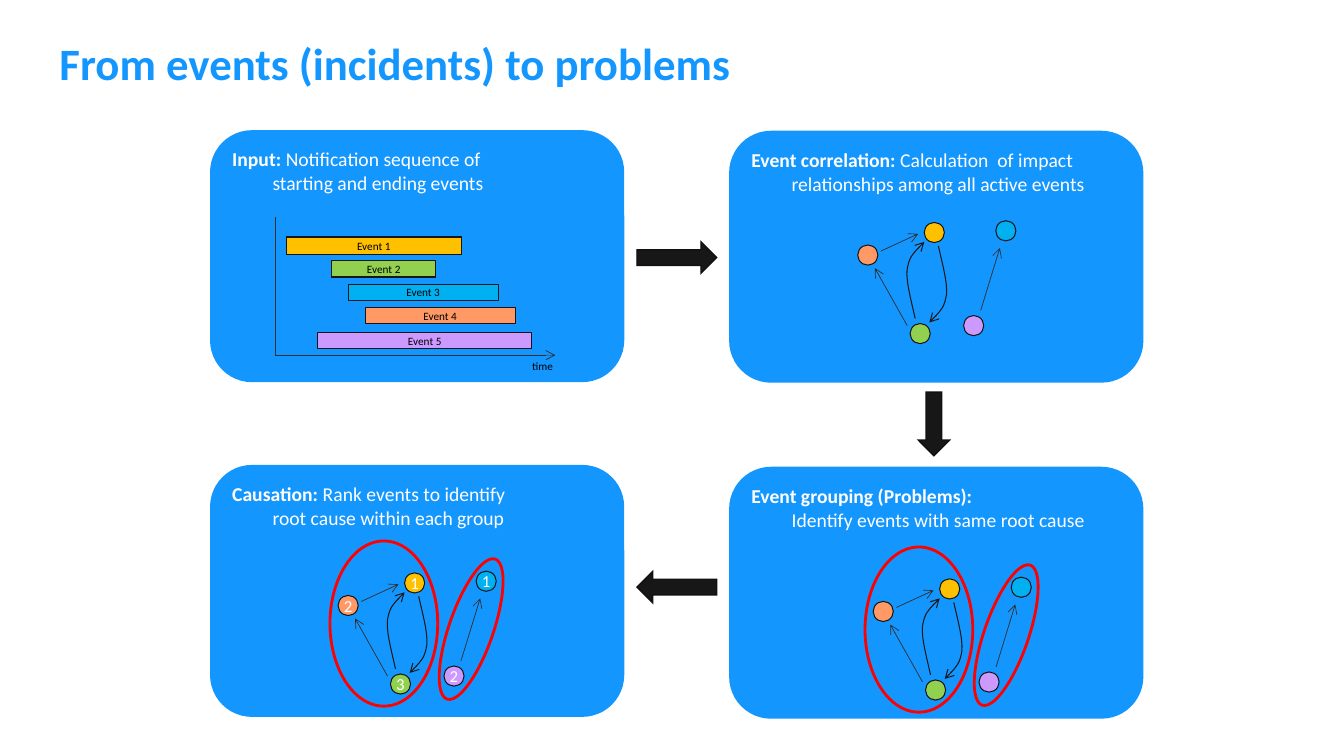
"""Build the slide on turning events into problems."""
from dataclasses import dataclass

from lxml import etree
from pptx import Presentation, util as u
from pptx.dml import color as c
from pptx.enum import shapes as kinds, text as txt
from pptx.oxml import ns


@dataclass(frozen=True)
class Theme:
    """Colours and type sizes."""
    font: str = "Calibri"
    blue: str = "1496FF"
    white: str = "FFFFFF"
    black: str = "000000"
    outline: str = "161616"
    link: str = "2E2E2E"
    dark: str = "171717"
    arrow_edge: str = "111111"
    ring: str = "FF0000"
    events: tuple = ("FFC000", "92D050", "00B0F0", "FF9966", "CC99FF")
    title: float = 32
    body: float = 14
    rank: float = 12
    small: float = 8


THEME = Theme()
PANEL_SIZE = (295.9, 180)
NODE = 14.4
NODE_SPOTS = ((47.5, 1.2), (37.4, 73.4), (98.6, 0), (0, 17.3), (75.6, 67.7))
LINKS = (((87.8, 64.1), (101.5, 19.4)),
         ((35.3, 74.9), (12.2, 33.8)),
         ((16.6, 21.6), (43.2, 9.4)))
DOWN_CURVE = ((57.6, 18), (60.5, 31), (64.1, 43.9), (63.4, 52.6),
              (61.9, 61.9), (56.9, 67), (51.1, 72.7))
UP_CURVE = tuple((98.6 - x, 87.8 - y) for x, y in DOWN_CURVE)
BARS = ((204.6, 169.3, 124.9, 12.2), (237.1, 186.4, 74, 11.5),
        (248.6, 203.2, 107.3, 11.5), (260.8, 219.7, 107.3, 11.5),
        (226.8, 237.6, 153.2, 11.5))


def style_line(line, color, width):
    """Give a line its colour and width."""
    line.color.rgb = c.RGBColor.from_string(color)
    line.width = u.Pt(width)


def add_arrowhead(shape):
    """Put an open arrowhead at the end of a line."""
    outline = shape.line._get_or_add_ln()
    etree.SubElement(outline, ns.qn("a:tailEnd"), type="arrow")


def write(paragraph, content, size, color, bold=False):
    """Add one run of text."""
    run = paragraph.add_run()
    run.text = content
    run.font.name = THEME.font
    run.font.size = u.Pt(size)
    run.font.bold = bold
    run.font.color.rgb = c.RGBColor.from_string(color)


def set_frame(shape, insets, anchor):
    """Prepare a text frame and return its first paragraph."""
    frame = shape.text_frame
    frame.word_wrap = True
    frame.vertical_anchor = anchor
    frame.margin_left = frame.margin_right = u.Pt(insets[0])
    frame.margin_top = frame.margin_bottom = u.Pt(insets[1])
    return frame.paragraphs[0]


def add_figure(slide, kind, box, fill=None, edge=None, width=0.75):
    """Add a preset shape with an optional fill and sharp outline."""
    figure = slide.shapes.add_shape(kind, *map(u.Pt, box))
    figure.shadow.inherit = False
    if fill:
        figure.fill.solid()
        figure.fill.fore_color.rgb = c.RGBColor.from_string(fill)
    else:
        figure.fill.background()
    if edge:
        style_line(figure.line, edge, width)
        outline = figure.line._get_or_add_ln()
        etree.SubElement(outline, ns.qn("a:miter"), lim="800000")
    else:
        figure.line.fill.background()
    return figure


def add_centred(figure, content, size, color):
    """Write one centred label in a shape."""
    paragraph = set_frame(figure, (0, 0), txt.MSO_ANCHOR.MIDDLE)
    paragraph.alignment = txt.PP_ALIGN.CENTER
    write(paragraph, content, size, color)


def add_label(slide, box, insets, content, size, color, bold=False):
    """Add a plain text box."""
    label = slide.shapes.add_textbox(*map(u.Pt, box))
    paragraph = set_frame(label, insets, txt.MSO_ANCHOR.TOP)
    write(paragraph, content, size, color, bold)
    return paragraph


def add_link(slide, start, end, arrow=True):
    """Add a thin straight line."""
    link = slide.shapes.add_connector(
        kinds.MSO_CONNECTOR.STRAIGHT, *map(u.Pt, (*start, *end)))
    style_line(link.line, THEME.link, 0.5)
    if arrow:
        add_arrowhead(link)
    etree.SubElement(link._element.spPr, ns.qn("a:effectLst"))


def add_curve(slide, origin, controls):
    """Add a curved arrow made of two cubic curves."""
    track = [(u.Pt(origin[0] + x), u.Pt(origin[1] + y)) for x, y in controls]
    builder = slide.shapes.build_freeform(*track[0])
    builder.add_line_segments(track[1:], close=False)
    curve = builder.convert_to_shape()
    segments = list(curve._element.iter(ns.qn("a:lnTo")))
    for trio in (segments[:3], segments[3:]):
        cubic = etree.Element(ns.qn("a:cubicBezTo"))
        trio[0].addprevious(cubic)
        for segment in trio:
            cubic.append(segment[0])
            segment.getparent().remove(segment)
    curve.shadow.inherit = False
    curve.fill.background()
    style_line(curve.line, THEME.dark, 0.75)
    add_arrowhead(curve)


def add_panel(slide, left, top, heading, first, second):
    """Add a rounded panel with a heading and a hanging second line."""
    panel = add_figure(slide, kinds.MSO_SHAPE.ROUNDED_RECTANGLE,
                       (left, top, *PANEL_SIZE), THEME.blue)
    paragraph = set_frame(panel, (7.2, 3.6), txt.MSO_ANCHOR.TOP)
    paragraph.alignment = txt.PP_ALIGN.LEFT
    properties = paragraph._p.get_or_add_pPr()
    properties.set("marL", str(u.Pt(28.8)))
    properties.set("indent", str(u.Pt(-28.8)))
    write(paragraph, heading, THEME.body, THEME.white, True)
    if first:
        write(paragraph, first, THEME.body, THEME.white)
    paragraph.add_line_break()
    write(paragraph, second, THEME.body, THEME.white)


def add_timeline(slide):
    """Add the axes and the event bars."""
    corner = (196.8, 253.7)
    add_link(slide, corner, (396.7, 253.7))
    add_link(slide, corner, (196.8, 154.8), arrow=False)
    for number, (box, color) in enumerate(zip(BARS, THEME.events), 1):
        bar = add_figure(slide, kinds.MSO_SHAPE.RECTANGLE, box, color, THEME.outline)
        add_centred(bar, f"Event {number}", THEME.small, THEME.black)
    add_label(slide, (373, 253.4, 34.6, 17.3), (7.2, 3.6), "time",
              THEME.small, THEME.black)


def add_graph(slide, left, top, ranks=(), grouped=False):
    """Add the event graph, with optional ranks and group rings."""
    for spot, ((x, y), color) in enumerate(zip(NODE_SPOTS, THEME.events)):
        node = add_figure(slide, kinds.MSO_SHAPE.OVAL,
                          (left + x, top + y, NODE, NODE), color, THEME.outline)
        if ranks:
            add_centred(node, ranks[spot], THEME.rank, THEME.white)
    for link in LINKS:
        add_link(slide, *((left + x, top + y) for x, y in link))
    for controls in (DOWN_CURVE, UP_CURVE):
        add_curve(slide, (left, top), controls)
    if grouped:
        for x, y, width, height, angle in ((-5.8, -21.6, 77, 118, 0),
                                           (79.2, -11.5, 31.7, 105.8, 19)):
            ring = add_figure(slide, kinds.MSO_SHAPE.OVAL,
                              (left + x, top + y, width, height),
                              edge=THEME.ring, width=2)
            ring.rotation = angle


def main():
    """Build and save the slide."""
    deck = Presentation()
    deck.slide_width, deck.slide_height = u.Pt(960), u.Pt(540)
    slide = deck.slides.add_slide(deck.slide_layouts[6])
    title = add_label(slide, (0, 26.2, 960, 97.9), (42.5, 3.6),
                      "From events (incidents) to problems",
                      THEME.title, THEME.blue, True)
    title.line_spacing = 0.9
    for panel in (
            (150, 93, "Input: ", "Notification sequence of",
             "starting and ending events"),
            (520.8, 93.4, "Event correlation: ", "Calculation  of impact",
             "relationships among all active events"),
            (150, 332.1, "Causation:", " Rank events to identify",
             "root cause within each group"),
            (520.8, 333.4, "Event grouping (Problems):", "",
             "Identify events with same root cause")):
        add_panel(slide, *panel)
    add_timeline(slide)
    add_graph(slide, 612.7, 157.7)
    add_graph(slide, 241.5, 408, ranks="13122", grouped=True)
    add_graph(slide, 623.7, 412.3, grouped=True)
    for kind, box in ((kinds.MSO_SHAPE.RIGHT_ARROW, (455, 172.8, 56.9, 22.3)),
                      (kinds.MSO_SHAPE.DOWN_ARROW, (655.9, 280.1, 22.3, 45.4)),
                      (kinds.MSO_SHAPE.LEFT_ARROW, (455, 408.2, 56.9, 22.3))):
        add_figure(slide, kind, box, THEME.dark, THEME.arrow_edge, 1)
    deck.save("out.pptx")


if __name__ == "__main__":
    main()
